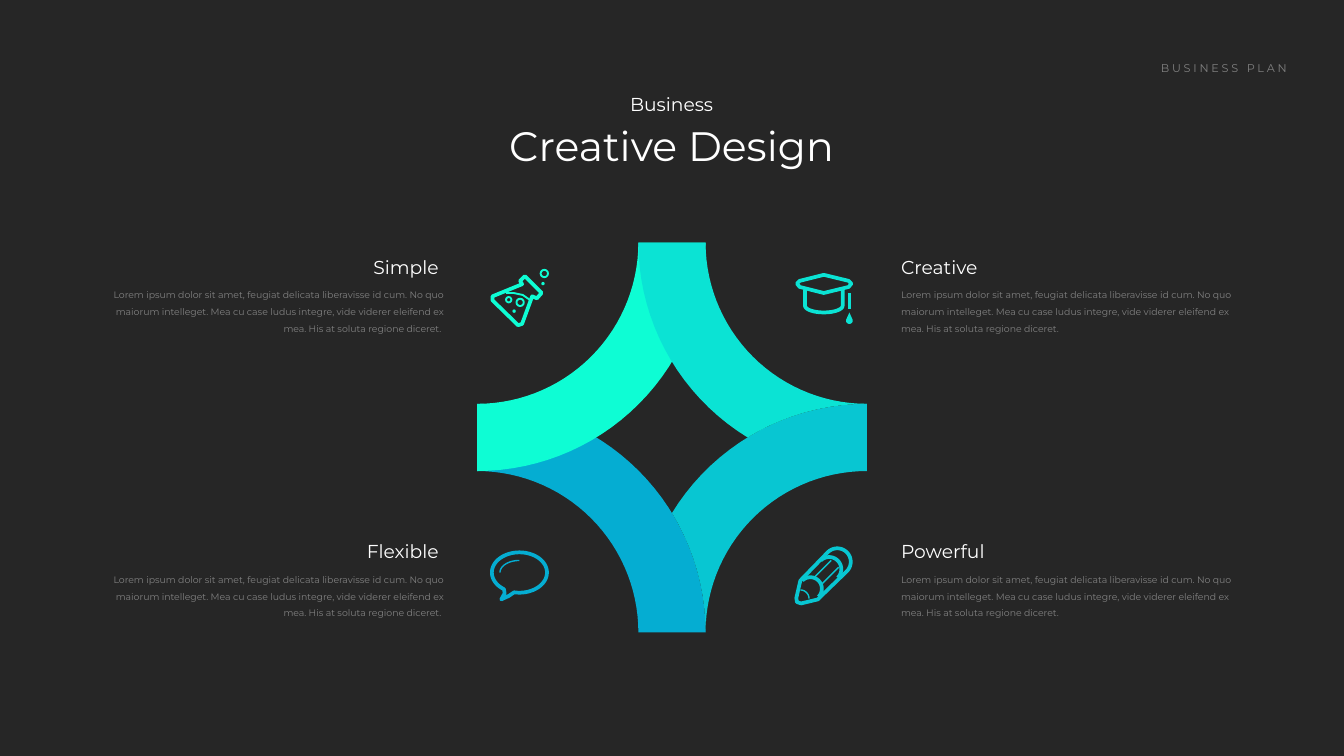
from dataclasses import dataclass
from math import asin, cos, degrees, radians, sin, sqrt

from lxml.etree import SubElement
from pptx import Presentation
from pptx.dml.color import RGBColor as Rgb
from pptx.enum.shapes import MSO_CONNECTOR as Link, MSO_SHAPE as Kind
from pptx.enum.text import MSO_AUTO_SIZE as Fit, PP_ALIGN as Align
from pptx.oxml.ns import qn
from pptx.util import Inches, Pt


@dataclass(frozen=True)
class Theme:
    font: str = "Montserrat"
    back: str = "262626"
    white: str = "FFFFFF"
    gray: str = "808080"
    blue: str = "05ADD2"
    mint: str = "0EFDD4"
    cyan: str = "08C6D2"
    teal: str = "0BE3D4"
    title: int = 44
    head: int = 20
    tag: int = 12
    body: int = 10
    thick: float = 4
    thin: float = 1.5


THEME = Theme()
LOREM = (
    "Lorem ipsum dolor sit amet, feugiat delicata liberavisse id cum. "
    "No quo maiorum intelleget. Mea cu case ludus integre, vide viderer "
    "eleifend ex mea. His at soluta regione diceret."
)
MID_X, MID_Y = 10, 6.51
REACH, OUTER = 2.9, 3.4
INNER = 2 * REACH - OUTER


def color(code):
    return Rgb.from_string(code)


def arc(x, y, wide, high, start, end):
    steps = max(8, int(abs(end - start) / 3))
    turns = [radians(start + (end - start) * i / steps) for i in range(steps + 1)]
    return [(x + wide * cos(t), y + high * sin(t)) for t in turns]


def trace(shapes, points, close=True):
    spots = [(Inches(x), Inches(y)) for x, y in points]
    pen = shapes.build_freeform(*spots[0], scale=1.0)
    pen.add_line_segments(spots[1:], close=close)
    shape = pen.convert_to_shape()
    shape.shadow.inherit = False
    return shape


def paint(shape, code):
    shape.shadow.inherit = False
    shape.fill.solid()
    shape.fill.fore_color.rgb = color(code)
    shape.line.fill.background()


def ink(shape, code, width):
    shape.shadow.inherit = False
    shape.fill.background()
    shape.line.color.rgb = color(code)
    shape.line.width = Pt(width)


def stroke(shapes, points, code, width=THEME.thick, close=False):
    ink(trace(shapes, points, close), code, width)


def rule(shapes, start, end, code, width):
    line = shapes.add_connector(Link.STRAIGHT, *map(Inches, start + end))
    line.line.color.rgb = color(code)
    line.line.width = Pt(width)
    SubElement(line._element.spPr, qn("a:effectLst"))


def disc(shapes, x, y, size):
    box = x - size / 2, y - size / 2, size, size
    return shapes.add_shape(Kind.OVAL, *map(Inches, box))


def add_text(slide, box, rows, align):
    shape = slide.shapes.add_textbox(*map(Inches, box))
    frame = shape.text_frame
    frame.word_wrap = True
    frame.auto_size = Fit.SHAPE_TO_FIT_TEXT
    for i, (words, size, code, before, space) in enumerate(rows):
        para = frame.add_paragraph() if i else frame.paragraphs[0]
        para.text = words
        para.alignment = align
        para.space_before = Pt(before)
        para.line_spacing = space
        font = para.runs[0].font
        font.name, font.size = THEME.font, Pt(size)
        font.color.rgb = color(code)
    return frame


def add_note(slide, x, y, head, align):
    tail = " " if align == Align.RIGHT else ""
    rows = [
        (head + tail, THEME.head, THEME.white, 12, 1.0),
        (LOREM + tail, THEME.body, THEME.gray, 6, 1.5),
    ]
    add_text(slide, (x, y, 5.36, 1.25), rows, align)


def add_star(slide):
    cut = degrees(asin(sqrt(OUTER**2 - REACH**2) / OUTER))
    left, right = MID_X - REACH, MID_X + REACH
    top, low = MID_Y - REACH, MID_Y + REACH
    blades = [
        (THEME.blue, [(left, low, OUTER, -90, 0), (left, low, INNER, 0, -90)]),
        (THEME.mint, [(left, top, OUTER, 90, 0), (left, top, INNER, 0, 90)]),
        (THEME.cyan, [
            (left, low, OUTER, 0, -cut),
            (right, low, OUTER, cut - 180, -90),
            (right, low, INNER, -90, -180),
        ]),
        (THEME.teal, [
            (right, low, OUTER, -90, -90 - cut),
            (right, top, OUTER, 90 + cut, 180),
            (right, top, INNER, 180, 90),
        ]),
    ]
    for code, arcs in blades:
        points = [p for x, y, r, start, end in arcs for p in arc(x, y, r, r, start, end)]
        paint(trace(slide.shapes, points), code)


def add_flask(slide, code):
    shapes = slide.shapes.add_group_shape().shapes
    glass = [
        (7.33, 4.41), (7.77, 4.23), (7.74, 4.18), (7.81, 4.11), (8.06, 4.36),
        (7.99, 4.44), (7.92, 4.41), (7.77, 4.82), (7.71, 4.84), (7.33, 4.47),
    ]
    stroke(shapes, glass, code, close=True)
    stroke(shapes, [(7.53, 4.36), (7.64, 4.36), (7.78, 4.39), (7.88, 4.46)], code, 2)
    for x, y, size in [(7.74, 4.5, 0.11), (8.1, 4.07, 0.11), (7.57, 4.46, 0.08)]:
        ink(disc(shapes, x, y, size), code, 2)
    for x, y in [(7.65, 4.63), (8.08, 4.22)]:
        paint(disc(shapes, x, y, 0.05), code)


def add_cap(slide, code):
    shapes = slide.shapes.add_group_shape().shapes
    board = [
        (11.9, 4.18), (12.26, 4.09), (12.63, 4.18), (12.67, 4.22),
        (12.63, 4.27), (12.26, 4.36), (11.9, 4.27), (11.86, 4.22),
    ]
    stroke(shapes, board, code, close=True)
    bowl = arc(12.26, 4.55, 0.28, 0.1, 180, 0)
    stroke(shapes, [(11.98, 4.31)] + bowl + [(12.54, 4.31)], code)
    rule(shapes, (12.64, 4.36), (12.64, 4.6), code, THEME.thick)
    drop = arc(12.64, 4.77, 0.05, 0.05, -10, 190)
    paint(trace(shapes, drop + [(12.64, 4.65)]), code)


def add_bubble(slide, code):
    shapes = slide.shapes.add_group_shape().shapes
    tail = [(7.57, 8.87), (7.46, 8.92), (7.51, 8.83)]
    stroke(shapes, arc(7.73, 8.52, 0.41, 0.3, 124, 461) + tail, code, close=True)
    stroke(shapes, arc(7.73, 8.52, 0.29, 0.18, 180, 270), code, THEME.thin)


def add_pencil(slide, code):
    shapes = slide.shapes.add_group_shape().shapes
    tip = [
        (12.2, 8.89), (12.17, 8.92), (11.92, 8.98),
        (11.86, 8.96), (11.85, 8.9), (11.91, 8.64),
    ]
    stroke(shapes, arc(12.46, 8.36, 0.2, 0.2, -135, 45) + tip, code, close=True)
    for x, y, size in [(12.34, 8.47, 0.18), (12.06, 8.76, 0.17)]:
        stroke(shapes, arc(x, y, size, size, -135, 45), code)
    stroke(shapes, arc(11.91, 8.91, 0.13, 0.13, -90, 0), code, THEME.thin)
    for x, y in [(12.11, 8.6), (12.22, 8.7)]:
        rule(shapes, (x, y), (x + 0.26, y - 0.26), code, THEME.thin)


def main():
    deck = Presentation()
    deck.slide_width, deck.slide_height = Inches(20), Inches(11.25)
    slide = deck.slides.add_slide(deck.slide_layouts[6])
    slide.background.fill.solid()
    slide.background.fill.fore_color.rgb = color(THEME.back)

    tag = [("BUSINESS PLAN", THEME.tag, THEME.gray, 0, 1.0)]
    frame = add_text(slide, (16.89, 0.87, 2.36, 0.3), tag, Align.RIGHT)
    frame.paragraphs[0].runs[0].font._element.set("spc", "300")

    add_star(slide)
    add_cap(slide, THEME.teal)
    add_bubble(slide, THEME.blue)
    add_flask(slide, THEME.mint)
    add_pencil(slide, THEME.cyan)

    title = [
        ("Business", THEME.head, THEME.white, 0, 1.0),
        ("Creative Design", THEME.title, THEME.white, 6, 1.0),
    ]
    add_text(slide, (6.83, 1.33, 6.33, 1.26), title, Align.CENTER)
    sides = [(1.34, Align.RIGHT, "Simple", "Flexible"), (13.31, Align.LEFT, "Creative", "Powerful")]
    for x, align, *heads in sides:
        for y, head in zip((3.76, 7.99), heads):
            add_note(slide, x, y, head, align)
    deck.save("out.pptx")


if __name__ == "__main__":
    main()
